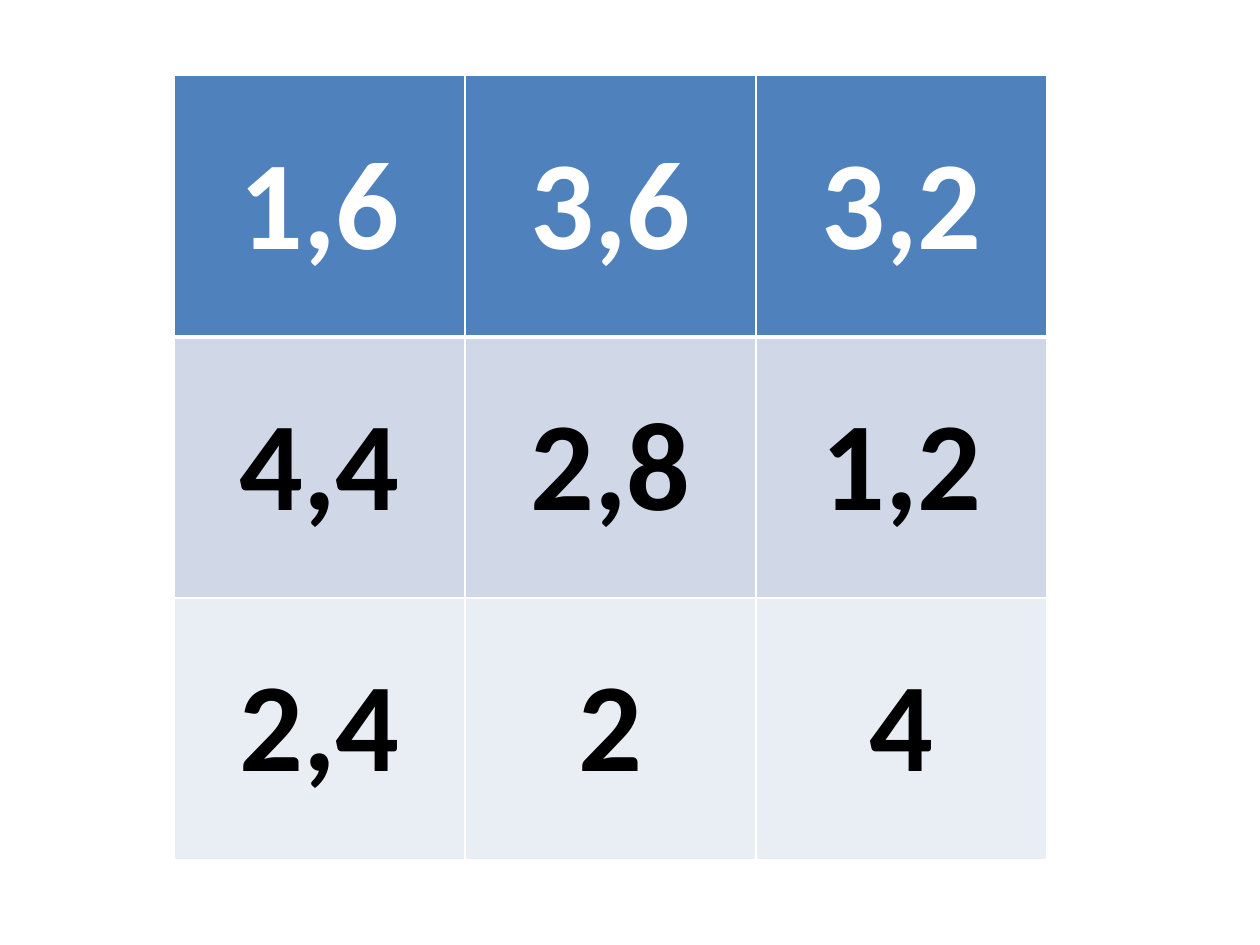
from lxml import etree
from pptx import Presentation
from pptx import util as u
from pptx.dml.color import RGBColor
from pptx.enum import text
from pptx.oxml import ns

HUES = {"white": "FFFFFF", "black": "000000", "blue": "4F81BD",
        "mid": "D0D8E8", "pale": "E9EDF4"}
ROWS = [
    ("blue", "white", ["1,6", "3,6", "3,2"]),
    ("mid", "black", ["4,4", "2,8", "1,2"]),
    ("pale", "black", ["2,4", "2", "4"]),
]
FONT = {"name": "Calibri", "size": u.Pt(72), "bold": True}


def rgb(name):
    return RGBColor.from_string(HUES[name])


def add_edge(cell, side, width):
    props = cell._tc.get_or_add_tcPr()
    line = etree.SubElement(props, ns.qn(f"a:ln{side}"), w=str(u.Pt(width)))
    fill = etree.SubElement(line, ns.qn("a:solidFill"))
    etree.SubElement(fill, ns.qn("a:srgbClr"), val=HUES["white"])


def fill_cell(cell, word, back, ink, edges):
    for side, width in edges.items():
        add_edge(cell, side, width)
    cell.fill.solid()
    cell.fill.fore_color.rgb = rgb(back)
    cell.vertical_anchor = text.MSO_ANCHOR.MIDDLE
    para = cell.text_frame.paragraphs[0]
    para.alignment = text.PP_ALIGN.CENTER
    run = para.add_run()
    run.text = word
    for key, value in FONT.items():
        setattr(run.font, key, value)
    run.font.color.rgb = rgb(ink)


def add_grid(slide, left, top, width, height):
    grid = slide.shapes.add_table(len(ROWS), len(ROWS[0][2]),
                                  left, top, width, height).table
    for r, (back, ink, words) in enumerate(ROWS):
        edges = {"L": 1, "R": 1, "T": 3 if r == 1 else 1, "B": 3 if r == 0 else 1}
        for c, word in enumerate(words):
            fill_cell(grid.cell(r, c), word, back, ink, edges)


def main():
    deck = Presentation()
    deck.slide_width, deck.slide_height = u.Inches(10), u.Inches(7.5)
    slide = deck.slides.add_slide(deck.slide_layouts[6])
    add_grid(slide, u.Inches(1.38), u.Inches(0.6), u.Inches(6.93), u.Inches(6.22))
    deck.save("out.pptx")


if __name__ == "__main__":
    main()
